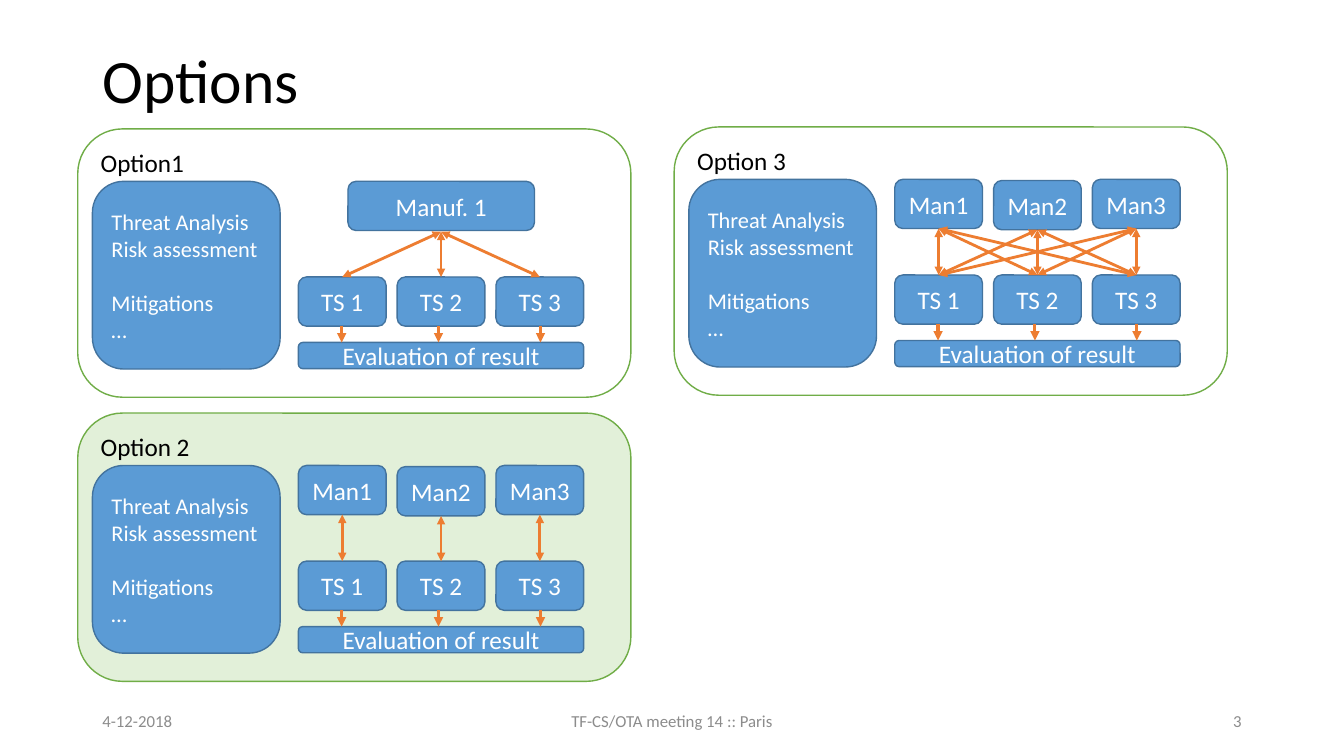
from itertools import product

from lxml.etree import SubElement
from pptx import Presentation
from pptx.dml.color import RGBColor
from pptx.enum.shapes import MSO_CONNECTOR as Connector, MSO_SHAPE as Shape
from pptx.enum.text import MSO_ANCHOR as Anchor, PP_ALIGN as Align
from pptx.oxml.ns import qn
from pptx.util import Cm, Pt

FONT = "Calibri"
BLUE, BLUE_EDGE = "5B9BD5", "43739E"
GREEN, PALE_GREEN = "70AD47", "E2F0D9"
ORANGE, WHITE, BLACK, GREY = "ED7D31", "FFFFFF", "000000", "8C8C8C"

# Lengths in cm, measured from the top left corner of an option panel
PANEL_WIDTH, PANEL_HEIGHT = 13.94, 6.76
COLUMN_LEFTS = [5.56 + 2.49 * column for column in range(3)]
BOX_WIDTH, BOX_HEIGHT = 2.21, 1.24
CENTERS = [left + BOX_WIDTH / 2 for left in COLUMN_LEFTS]
MAKER_TOPS = [1.32, 1.35, 1.32]
SERVICE_TOP, RESULT_TOP = 3.73, 5.38
RESULT_ARROWS = [6.65, 9.09, 11.66]

MAKERS = ["Man1", "Man2", "Man3"]
ANALYSIS = "Threat Analysis\nRisk assessment\nMitigations\n…"


def color(hex_code):
    return RGBColor.from_string(hex_code)


def write(shape, text, size, hex_code, align=Align.LEFT, anchor=Anchor.MIDDLE):
    frame = shape.text_frame
    frame.word_wrap = True
    frame.vertical_anchor = anchor
    frame.text = text
    for paragraph in frame.paragraphs:
        paragraph.alignment = align
        for run in paragraph.runs:
            run.font.name = FONT
            run.font.size = Pt(size)
            run.font.color.rgb = color(hex_code)


def add_box(slide, left, top, width, height, fill=BLUE, edge=BLUE_EDGE):
    box = slide.shapes.add_shape(
        Shape.ROUNDED_RECTANGLE, Cm(left), Cm(top), Cm(width), Cm(height))
    box.shadow.inherit = False
    box.fill.solid()
    box.fill.fore_color.rgb = color(fill)
    box.line.color.rgb = color(edge)
    box.line.width = Pt(1)
    return box


def add_label_box(slide, text, left, top, width=BOX_WIDTH, height=BOX_HEIGHT):
    box = add_box(slide, left, top, width, height)
    write(box, text, 18, WHITE, Align.CENTER)


def add_arrow(slide, start, end, width, ends):
    arrow = slide.shapes.add_connector(
        Connector.STRAIGHT, *(Cm(length) for length in (*start, *end)))
    arrow.line.color.rgb = color(ORANGE)
    arrow.line.width = Pt(width)
    line = arrow.line._get_or_add_ln()
    for name in ends:
        SubElement(line, qn(f"a:{name}"), type="triangle")
    SubElement(arrow._element.spPr, qn("a:effectLst"))


def add_analysis(slide, left, top):
    card = add_box(slide, left, top, 4.73, 4.73)
    write(card, ANALYSIS, 16, WHITE)
    card.text_frame.paragraphs[2].space_before = Pt(19.5)


def add_option(slide, title, left, top, makers, links, fill=WHITE):
    """Links are (maker column, service column) pairs."""
    panel = add_box(slide, left, top, PANEL_WIDTH, PANEL_HEIGHT, fill, GREEN)
    write(panel, title, 18, BLACK, anchor=Anchor.TOP)
    add_analysis(slide, left + 0.37, top + 1.32)

    if len(makers) == 1:
        add_label_box(slide, makers[0], left + 6.81, top + 1.32, 4.7)
    else:
        for maker, x, y in zip(makers, COLUMN_LEFTS, MAKER_TOPS):
            add_label_box(slide, maker, left + x, top + y)
    for number, x in enumerate(COLUMN_LEFTS, 1):
        add_label_box(slide, f"TS {number}", left + x, top + SERVICE_TOP)
    add_label_box(slide, "Evaluation of result",
                  left + COLUMN_LEFTS[0], top + RESULT_TOP, 7.19, 0.66)

    for maker, service in links:
        add_arrow(slide,
                  (left + CENTERS[maker], top + MAKER_TOPS[maker] + BOX_HEIGHT),
                  (left + CENTERS[service], top + SERVICE_TOP),
                  2, ["headEnd", "tailEnd"])
    for x in RESULT_ARROWS:
        add_arrow(slide, (left + x, top + SERVICE_TOP + BOX_HEIGHT),
                  (left + x, top + RESULT_TOP), 2.25, ["tailEnd"])


def add_title(slide, text):
    title = slide.shapes.title
    title.left, title.top = Cm(2.33), Cm(1.02)
    title.width, title.height = Cm(29.21), Cm(2.18)
    write(title, text, 44, BLACK)
    title.text_frame.paragraphs[0].line_spacing = 0.9


def add_footer(slide, text, left, width, align):
    footer = slide.shapes.add_textbox(Cm(left), Cm(17.65), Cm(width), Cm(1.02))
    write(footer, text, 12, GREY, align)


def main():
    deck = Presentation()
    deck.slide_width, deck.slide_height = Cm(33.87), Cm(19.05)
    slide = deck.slides.add_slide(deck.slide_layouts[5])

    add_title(slide, "Options")
    add_option(slide, "Option1", 1.96, 3.25, ["Manuf. 1"],
               [(1, service) for service in range(3)])
    add_option(slide, "Option 2", 1.96, 10.41, MAKERS,
               [(column, column) for column in range(3)], PALE_GREEN)
    add_option(slide, "Option 3", 16.99, 3.2, MAKERS,
               product(range(3), repeat=2))

    add_footer(slide, "4-12-2018", 2.33, 7.62, Align.LEFT)
    add_footer(slide, "TF-CS/OTA meeting 14 :: Paris", 11.22, 11.43, Align.CENTER)
    add_footer(slide, "3", 23.92, 7.62, Align.RIGHT)
    deck.save("out.pptx")


if __name__ == "__main__":
    main()
